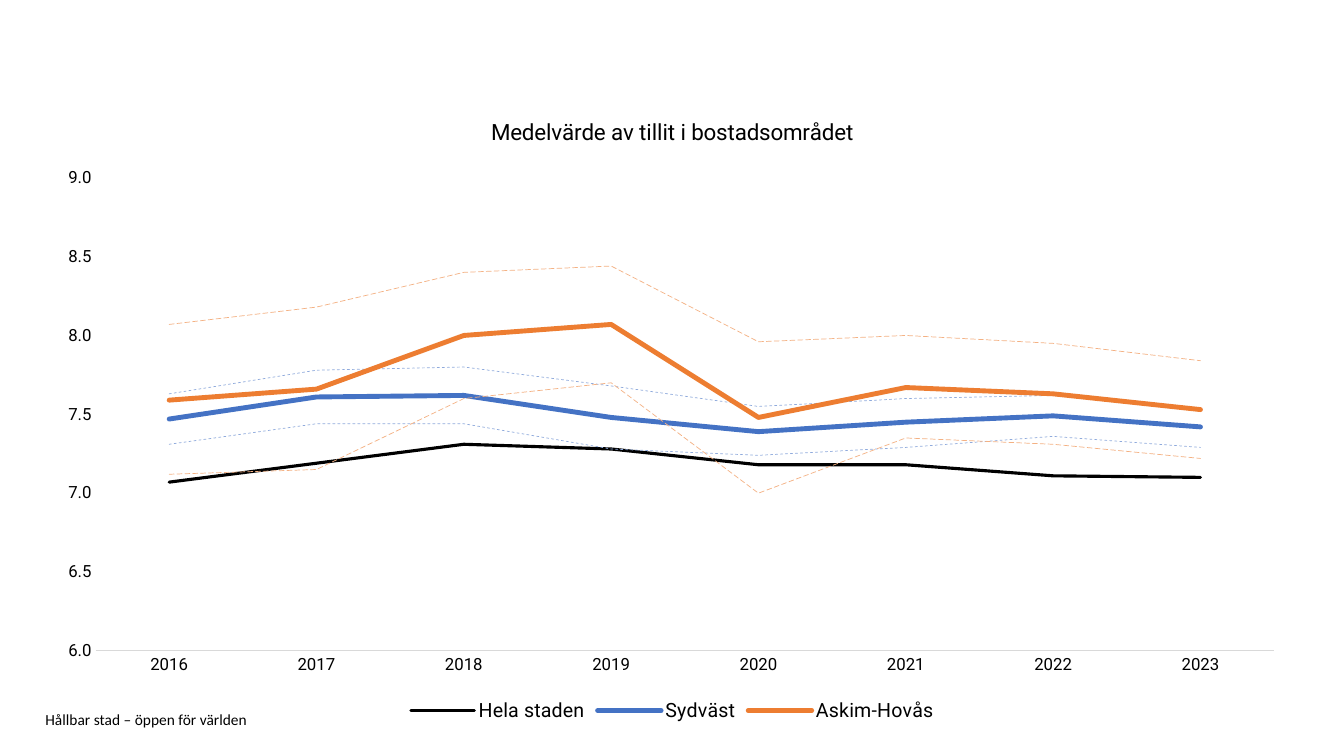
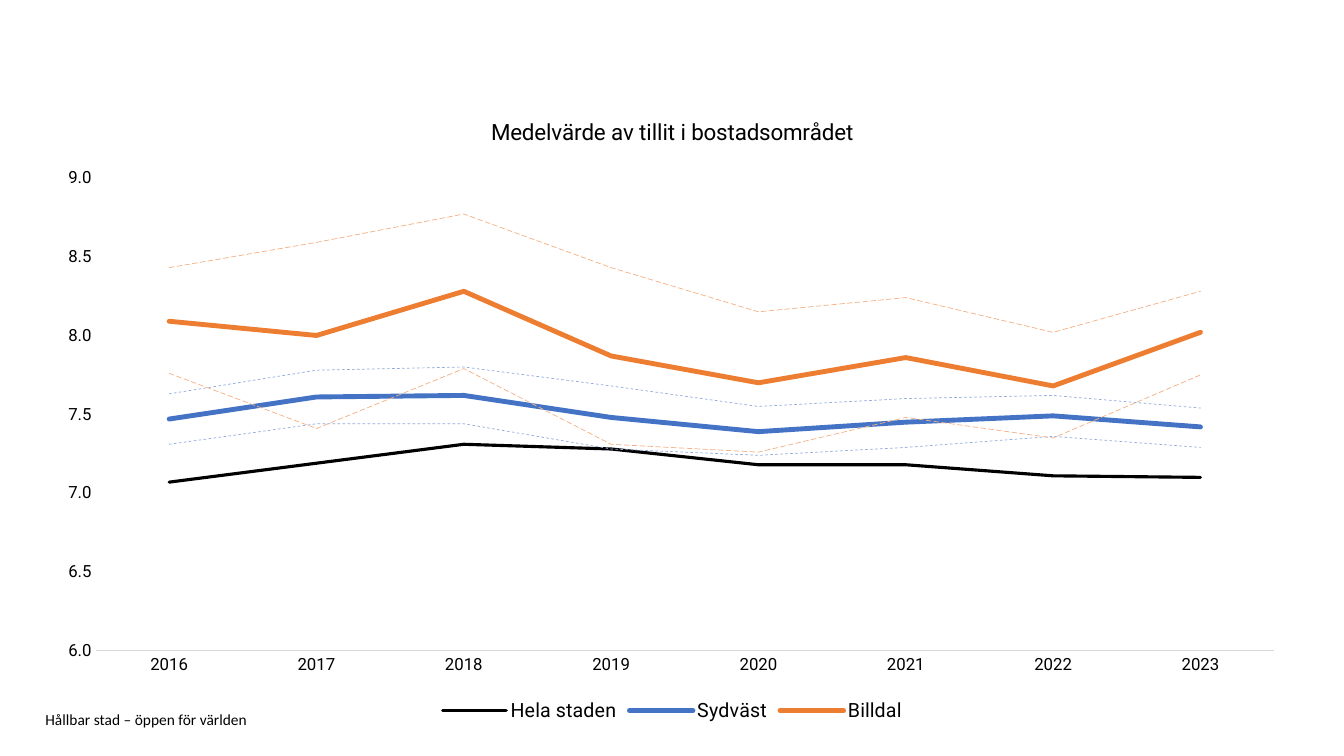
"""Build two slides that compare neighbourhood trust in line charts."""
from dataclasses import dataclass

from pptx import Presentation
from pptx.chart.data import CategoryChartData
from pptx.dml.color import RGBColor
from pptx.enum import chart as charts, dml, text
from pptx.oxml import parse_xml
from pptx.oxml.ns import nsdecls
from pptx.util import Pt

FOOTER = "Hållbar stad – öppen för världen"
CHART_TITLE = "Medelvärde av tillit i bostadsområdet"
YEARS = [str(year) for year in range(2016, 2024)]

SHARED_SERIES = [
    ("Hela staden", "city", [7.07, 7.19, 7.31, 7.28, 7.18, 7.18, 7.11, 7.1]),
    ("Sydväst", "district", [7.47, 7.61, 7.62, 7.48, 7.39, 7.45, 7.49, 7.42]),
    ("Series 3", "district_bound", [7.31, 7.44, 7.44, 7.28, 7.24, 7.29, 7.36, 7.29]),
    ("Series 4", "district_bound", [7.63, 7.78, 7.8, 7.68, 7.55, 7.6, 7.62, 7.54]),
]
AREA_SERIES = [
    [
        ("Askim-Hovås", "area", [7.59, 7.66, 8, 8.07, 7.48, 7.67, 7.63, 7.53]),
        ("Series 6", "area_bound", [7.12, 7.15, 7.6, 7.7, 7, 7.35, 7.31, 7.22]),
        ("Series 7", "area_bound", [8.07, 8.18, 8.4, 8.44, 7.96, 8, 7.95, 7.84]),
    ],
    [
        ("Billdal", "area", [8.09, 8, 8.28, 7.87, 7.7, 7.86, 7.68, 8.02]),
        ("Series 6", "area_bound", [7.76, 7.41, 7.79, 7.31, 7.26, 7.48, 7.35, 7.75]),
        ("Series 7", "area_bound", [8.43, 8.59, 8.77, 8.43, 8.15, 8.24, 8.02, 8.28]),
    ],
]


@dataclass(frozen=True)
class Theme:
    """Colours, fonts and type sizes."""
    ink: str = "000000"
    axis: str = "D9D9D9"
    chart_font: str = "Roboto"
    footer_font: str = "Calibri"
    title_size: float = 16
    legend_size: float = 14
    label_size: float = 12
    footer_size: float = 11


THEME = Theme()
LINE_STYLES = {
    "city": (THEME.ink, 2.25, None),
    "district": ("4472C4", 3.5, None),
    "district_bound": ("8FAADC", 0.5, dml.MSO_LINE.DASH),
    "area": ("ED7D31", 3.5, None),
    "area_bound": ("F4B183", 0.5, dml.MSO_LINE.LONG_DASH),
}
PAGE_SIZE = (960, 540)
FOOTER_BOX = (32.4, 508.3, 680.4, 11.5)
CHART_BOX = (32.4, 68.4, 895.7, 450.7)
PLOT_SHARES = {"x": 0.04, "y": 0.13, "w": 0.94, "h": 0.75}


def points(lengths):
    """Convert numbers to point lengths."""
    return [Pt(length) for length in lengths]


def set_font(font, size, name):
    """Apply the shared ink colour with a size and typeface."""
    font.size, font.name, font.bold = Pt(size), name, False
    font.color.rgb = RGBColor.from_string(THEME.ink)


def set_line(line, color, width, dash=None):
    """Style a line."""
    line.color.rgb = RGBColor.from_string(color)
    line.width = Pt(width)
    if dash is not None:
        line.dash_style = dash


def add_footer(page):
    """Place the footer text."""
    frame = page.shapes.add_textbox(*points(FOOTER_BOX)).text_frame
    frame.margin_left = frame.margin_top = frame.margin_right = frame.margin_bottom = 0
    frame.word_wrap = True
    frame.vertical_anchor = text.MSO_ANCHOR.MIDDLE
    frame.text = FOOTER
    set_font(frame.paragraphs[0].runs[0].font, THEME.footer_size, THEME.footer_font)


def style_axes(chart):
    """Format the year and value axes."""
    for axis in (chart.category_axis, chart.value_axis):
        axis.major_tick_mark = axis.minor_tick_mark = charts.XL_TICK_MARK.NONE
        axis.has_major_gridlines = False
    set_line(chart.category_axis.format.line, THEME.axis, 0.75)
    values = chart.value_axis
    values.minimum_scale, values.maximum_scale, values.major_unit = 6, 9, 0.5
    values.tick_labels.number_format = "0.0"
    values.tick_labels.number_format_is_linked = False
    values.format.line.fill.background()


def place_plot(chart):
    """Fix the inner plot area within the chart."""
    plot_area = chart.element.xpath("c:chart/c:plotArea")[0]
    for layout in plot_area.xpath("c:layout"):
        plot_area.remove(layout)
    modes = "".join(f'<c:{key}Mode val="edge"/>' for key in "xy")
    shares = "".join(f'<c:{key} val="{share}"/>' for key, share in PLOT_SHARES.items())
    plot_area.insert(0, parse_xml(
        f'<c:layout {nsdecls("c")}><c:manualLayout><c:layoutTarget val="inner"/>'
        f"{modes}{shares}</c:manualLayout></c:layout>"))


def style_legend(chart, rows):
    """Show only the main lines in the legend."""
    chart.has_legend = True
    legend = chart.legend
    legend.position = charts.XL_LEGEND_POSITION.BOTTOM
    legend.include_in_layout = False
    set_font(legend.font, THEME.legend_size, THEME.chart_font)
    anchor = chart.element.xpath("c:chart/c:legend/c:legendPos")[0]
    hidden = [index for index, row in enumerate(rows) if row[1].endswith("_bound")]
    for index in reversed(hidden):
        anchor.addnext(parse_xml(
            f'<c:legendEntry {nsdecls("c")}><c:idx val="{index}"/>'
            '<c:delete val="1"/></c:legendEntry>'))


def add_trust_chart(page, rows):
    """Draw the trust lines with their bounds."""
    data = CategoryChartData(number_format="0.00")
    data.categories = YEARS
    for name, _, values in rows:
        data.add_series(name, values)
    chart = page.shapes.add_chart(
        charts.XL_CHART_TYPE.LINE, *points(CHART_BOX), data).chart
    set_font(chart.font, THEME.label_size, THEME.chart_font)
    chart.has_title = True
    title = chart.chart_title.text_frame
    title.text = CHART_TITLE
    set_font(title.paragraphs[0].runs[0].font, THEME.title_size, THEME.chart_font)
    chart.plots[0].vary_by_categories = False
    for series, (_, role, _) in zip(chart.plots[0].series, rows):
        series.smooth = False
        series.marker.style = charts.XL_MARKER_STYLE.NONE
        set_line(series.format.line, *LINE_STYLES[role])
    for outline in chart.element.xpath(".//c:ser/c:spPr/a:ln"):
        outline.set("cap", "rnd")
    style_axes(chart)
    place_plot(chart)
    style_legend(chart, rows)


def main():
    """Build and save the deck."""
    deck = Presentation()
    deck.slide_width, deck.slide_height = points(PAGE_SIZE)
    blank = deck.slide_layouts[6]
    for area_rows in AREA_SERIES:
        page = deck.slides.add_slide(blank)
        add_footer(page)
        add_trust_chart(page, SHARED_SERIES + area_rows)
    deck.save("out.pptx")


if __name__ == "__main__":
    main()
